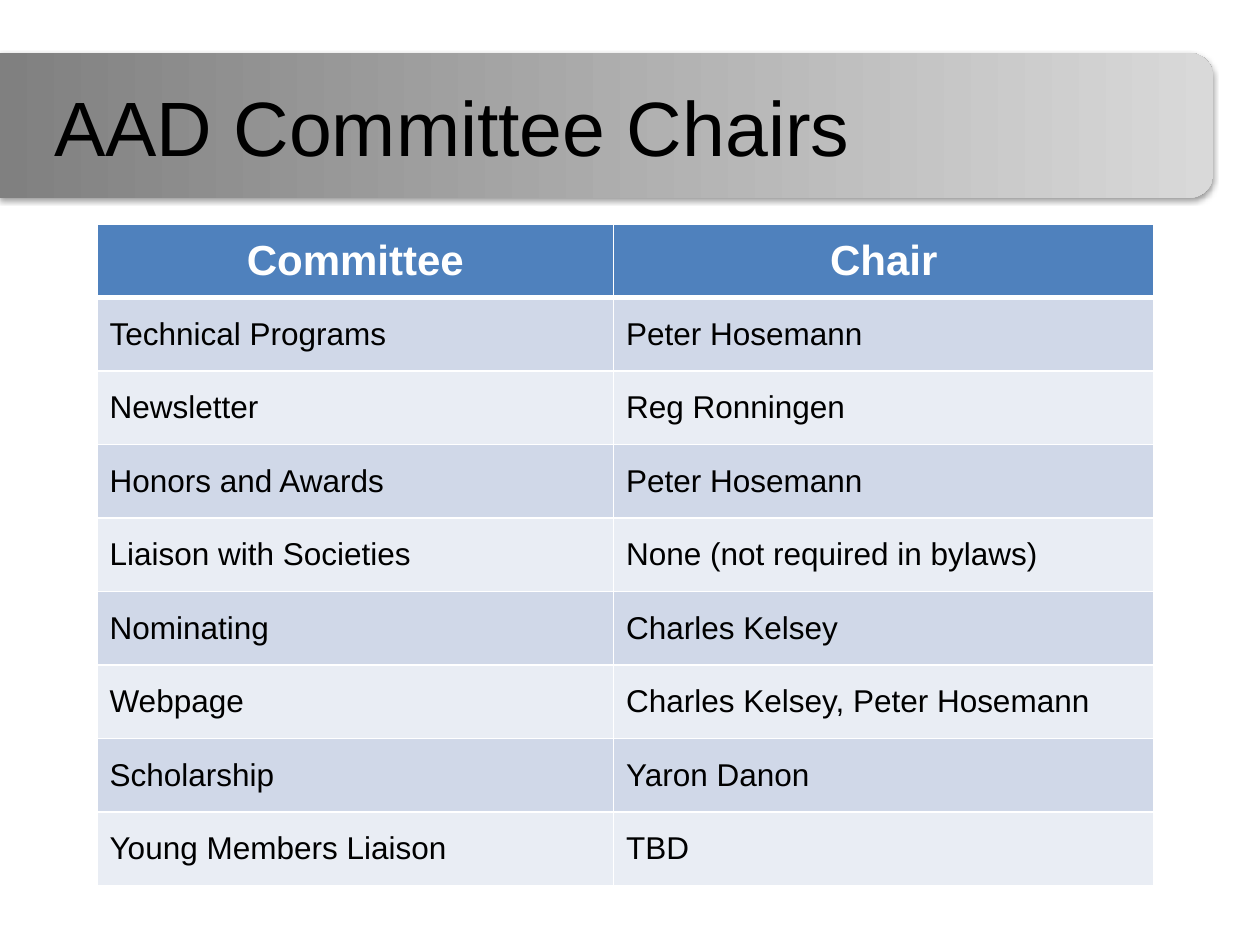
from lxml import etree
from pptx import Presentation
from pptx.dml.color import RGBColor
from pptx.enum.shapes import MSO_SHAPE
from pptx.enum.text import MSO_ANCHOR, PP_ALIGN
from pptx.oxml import parse_xml
from pptx.oxml.ns import nsdecls, qn
from pptx.util import Inches, Pt

ROUND_TOP = MSO_SHAPE.ROUND_2_SAME_RECTANGLE
MIDDLE = MSO_ANCHOR.MIDDLE
CENTER, LEFT = PP_ALIGN.CENTER, PP_ALIGN.LEFT

BLACK = RGBColor(0x00, 0x00, 0x00)
WHITE = RGBColor(0xFF, 0xFF, 0xFF)
DARK_GRAY = RGBColor(0x80, 0x80, 0x80)
LIGHT_GRAY = RGBColor(0xD9, 0xD9, 0xD9)
HEADER_BLUE = RGBColor(0x4F, 0x81, 0xBD)
BANDS = (RGBColor(0xD0, 0xD8, 0xE8), RGBColor(0xE9, 0xED, 0xF4))
FONT = "Arial"

COMMITTEES = [
    ("Committee", "Chair"),
    ("Technical Programs", "Peter Hosemann"),
    ("Newsletter", "Reg Ronningen"),
    ("Honors and Awards", "Peter Hosemann"),
    ("Liaison with Societies", "None (not required in bylaws)"),
    ("Nominating", "Charles Kelsey"),
    ("Webpage", "Charles Kelsey, Peter Hosemann"),
    ("Scholarship", "Yaron Danon"),
    ("Young Members Liaison", "TBD"),
]


def format_text(text_frame, size, color, alignment, bold=False):
    text_frame.vertical_anchor = MIDDLE
    for paragraph in text_frame.paragraphs:
        paragraph.alignment = alignment
        for run in paragraph.runs:
            run.font.name = FONT
            run.font.size = Pt(size)
            run.font.bold = bold
            run.font.color.rgb = color


def add_title_band(slide, left, top, width, height):
    # A quarter turn puts the rounded corners on the right
    band = slide.shapes.add_shape(
        ROUND_TOP, left + (width - height) // 2, top + (height - width) // 2, height, width
    )
    band.rotation = 90
    band.line.fill.background()

    # Gradient runs along the band, dark to light
    band.fill.gradient()
    band.fill.gradient_angle = 90
    for stop, color in zip(band.fill.gradient_stops, (DARK_GRAY, LIGHT_GRAY)):
        stop.color.rgb = color

    # Soft shadow below
    band.shadow.inherit = False
    effects = band.element.spPr.find(qn("a:effectLst"))
    effects.append(parse_xml(
        f'<a:outerShdw {nsdecls("a")} blurRad="{Pt(3.1)}" dist="{Pt(1.6)}" '
        'dir="5400000" rotWithShape="0"><a:srgbClr val="000000">'
        '<a:alpha val="38000"/></a:srgbClr></a:outerShdw>'
    ))
    slide.shapes.title.element.addprevious(band.element)


def place_title(slide, text, left, top, width, height):
    title = slide.shapes.title
    title.left, title.top, title.width, title.height = left, top, width, height
    title.text_frame.text = text
    format_text(title.text_frame, 44, BLACK, CENTER)


def set_border(cell, side, points):
    properties = cell._tc.get_or_add_tcPr()
    line = etree.SubElement(properties, qn(f"a:ln{side}"), w=str(Pt(points)))
    fill = etree.SubElement(line, qn("a:solidFill"))
    etree.SubElement(fill, qn("a:srgbClr"), val=str(WHITE))


def add_committee_table(slide, rows, left, top, width, height, first_width):
    table = slide.shapes.add_table(len(rows), len(rows[0]), left, top, width, height).table
    table.columns[0].width = first_width
    table.columns[1].width = width - first_width

    for row_index, row in enumerate(rows):
        is_header = row_index == 0
        for column_index, text in enumerate(row):
            cell = table.cell(row_index, column_index)
            cell.text_frame.text = text
            if is_header:
                format_text(cell.text_frame, 24, WHITE, CENTER, bold=True)
            else:
                format_text(cell.text_frame, 18, BLACK, LEFT)
            cell.vertical_anchor = MIDDLE

            # Thin white grid, with a thick rule under the header
            set_border(cell, "L", 1)
            set_border(cell, "R", 1)
            set_border(cell, "T", 3 if row_index == 1 else 1)
            set_border(cell, "B", 3 if is_header else 1)
            cell.fill.solid()
            cell.fill.fore_color.rgb = HEADER_BLUE if is_header else BANDS[(row_index - 1) % 2]


def main():
    presentation = Presentation()
    presentation.slide_width, presentation.slide_height = Inches(10), Inches(7.5)
    slide = presentation.slides.add_slide(presentation.slide_layouts[5])

    add_title_band(slide, Inches(0), Inches(0.42), Inches(9.63), Inches(1.15))
    place_title(slide, "AAD Committee Chairs",
                Inches(0.15), Inches(0.54), Inches(6.88), Inches(0.92))
    add_committee_table(slide, COMMITTEES, Inches(0.77), Inches(1.78),
                        Inches(8.39), Inches(5.25), first_width=Inches(4.1))
    presentation.save("out.pptx")


if __name__ == "__main__":
    main()
